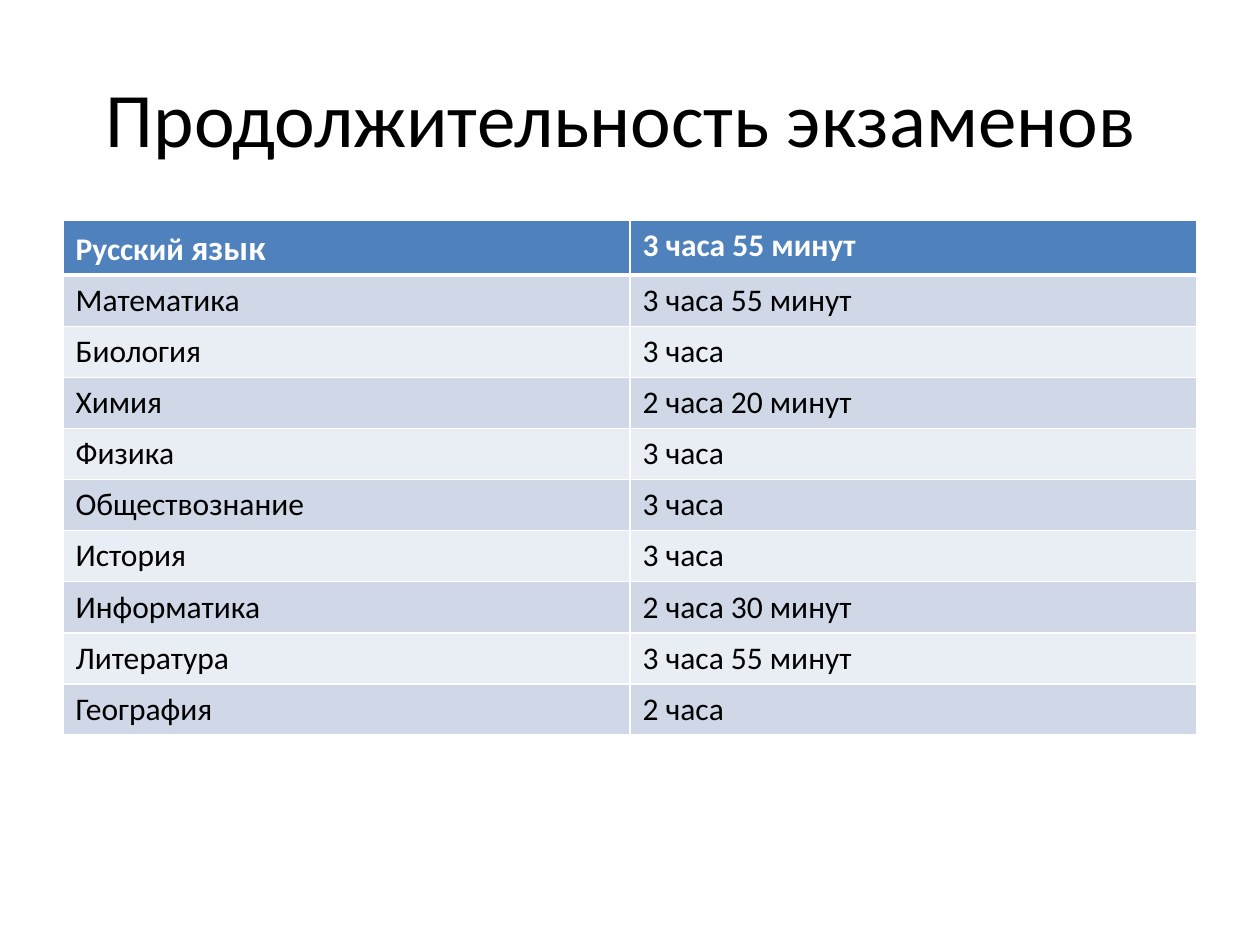
import dataclasses

import pptx
import pptx.dml.color
import pptx.enum.text
import pptx.oxml.ns
import pptx.util
from lxml import etree

Inches = pptx.util.Inches
Pt = pptx.util.Pt
RGB = pptx.dml.color.RGBColor.from_string


@dataclasses.dataclass(frozen=True)
class Theme:
    font: str = "Calibri"
    ink: str = "000000"
    white: str = "FFFFFF"
    head: str = "4F81BD"
    bands: tuple = ("D0D8E8", "E9EDF4")
    title: int = 44
    body: int = 18
    large: int = 20
    thin: int = 1
    thick: int = 3


THEME = Theme()

HEAD = (
    (("Русский ", THEME.body), ("язык", THEME.large), (" ", THEME.body)),
    (("3 часа 55 минут", THEME.body),),
)
EXAMS = (
    ("Математика", "3 часа 55 минут"),
    ("Биология", "3 часа"),
    ("Химия", "2 часа 20 минут"),
    ("Физика", "3 часа"),
    ("Обществознание", "3 часа"),
    ("История", "3 часа"),
    ("Информатика", "2 часа 30 минут"),
    ("Литература", "3 часа 55 минут"),
    ("География", "2 часа"),
)


def add_run(para, text, size, color, bold=False):
    run = para.add_run()
    run.text = text
    font = run.font
    font.name, font.size, font.bold = THEME.font, Pt(size), bold
    font.color.rgb = RGB(color)


def add_title(slide, left, top, width, height):
    box = slide.shapes.add_textbox(left, top, width, height)
    frame = box.text_frame
    frame.word_wrap = True
    frame.vertical_anchor = pptx.enum.text.MSO_ANCHOR.MIDDLE
    para = frame.paragraphs[0]
    para.alignment = pptx.enum.text.PP_ALIGN.CENTER
    add_run(para, "Продолжительность экзаменов ", THEME.title, THEME.ink)


def set_edges(cell, top, bottom):
    """Draw white borders; top and bottom are widths in points."""
    props = cell._tc.get_or_add_tcPr()
    qn = pptx.oxml.ns.qn
    edges = {"lnL": THEME.thin, "lnR": THEME.thin, "lnT": top, "lnB": bottom}
    for tag, size in edges.items():
        line = etree.SubElement(props, qn(f"a:{tag}"), w=str(Pt(size)))
        fill = etree.SubElement(line, qn("a:solidFill"))
        etree.SubElement(fill, qn("a:srgbClr"), val=THEME.white)


def add_exams(slide, left, top, width, height):
    body = [[((text, THEME.body),) for text in exam] for exam in EXAMS]
    rows = [HEAD, *body]
    shape = slide.shapes.add_table(len(rows), len(HEAD), left, top, width, height)
    table = shape.table
    first = Inches(0.43)
    rest = (height - first) // len(body)
    for i, row in enumerate(rows):
        is_head = i == 0
        table.rows[i].height = first if is_head else rest
        shade = THEME.head if is_head else THEME.bands[(i - 1) % 2]
        color = THEME.white if is_head else THEME.ink
        upper = THEME.thick if i == 1 else THEME.thin
        lower = THEME.thick if is_head else THEME.thin
        for j, runs in enumerate(row):
            cell = table.cell(i, j)
            set_edges(cell, upper, lower)
            cell.fill.solid()
            cell.fill.fore_color.rgb = RGB(shade)
            for text, size in runs:
                add_run(cell.text_frame.paragraphs[0], text, size, color, is_head)


def main():
    deck = pptx.Presentation()
    deck.slide_width, deck.slide_height = Inches(10), Inches(7.5)
    slide = deck.slides.add_slide(deck.slide_layouts[6])
    left, width = Inches(0.5), Inches(9)
    add_title(slide, left, Inches(0.3), width, Inches(1.25))
    add_exams(slide, left, Inches(1.75), width, Inches(4.08))
    deck.save("out.pptx")


if __name__ == "__main__":
    main()
